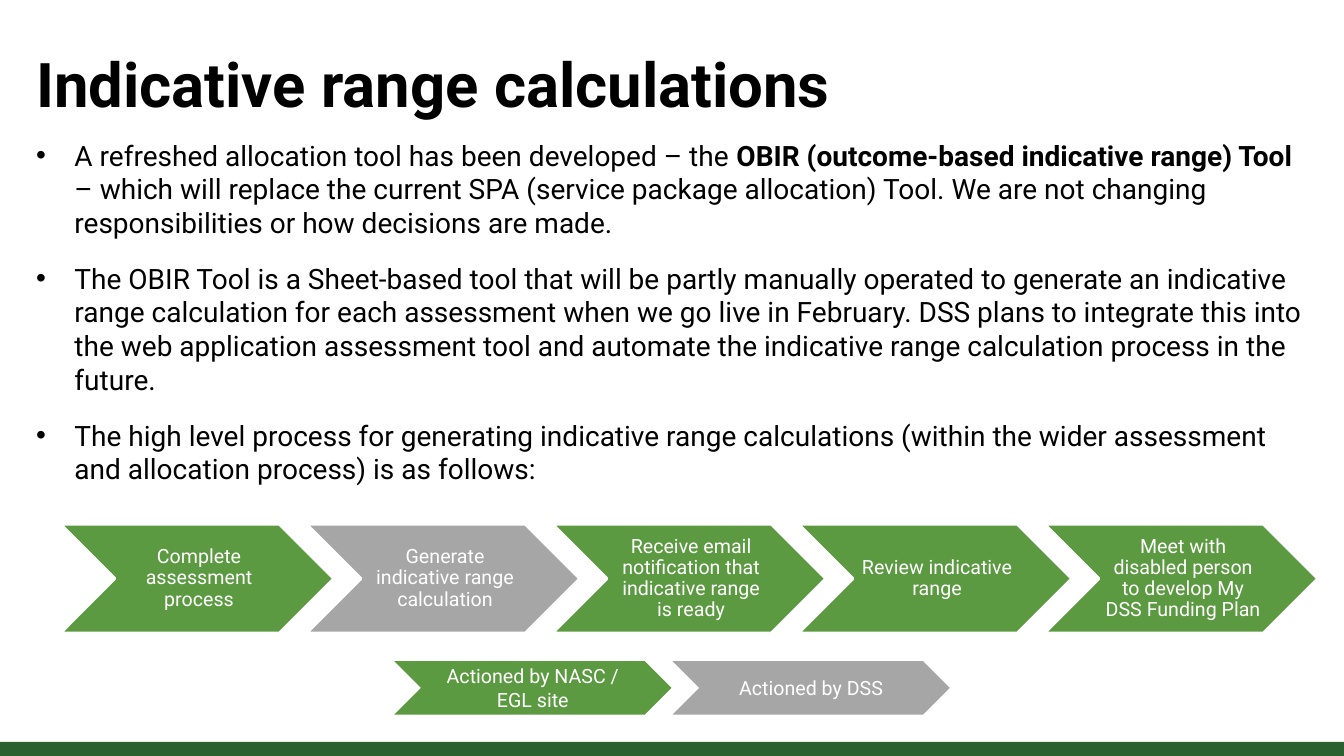
from pptx import Presentation
from pptx.dml.color import RGBColor
from pptx.enum.shapes import MSO_SHAPE
from pptx.enum.text import MSO_ANCHOR, PP_ALIGN
from pptx.oxml.ns import qn
from pptx.util import Inches, Pt
from lxml.etree import SubElement

# The grid has 100 cells to the inch in both directions
COLUMNS, ROWS = 1333, 750
BLACK, WHITE = "000000", "FFFFFF"
DARK_GREEN, GREEN, GREY = "2A602F", "5C9A42", "A6A6A6"


def colour(hex_code):
    return RGBColor.from_string(hex_code)


def cells(count):
    return Inches(count / 100)


class SlideBuilder:
    font_name = "Roboto"
    label_size = 14

    def __init__(self, presentation):
        self.slide = presentation.slides.add_slide(presentation.slide_layouts[6])

    def style(self, font, size, hex_code, bold=False):
        font.name, font.size, font.bold = self.font_name, Pt(size), bold
        font.color.rgb = colour(hex_code)

    def block(self, kind, area, fill, outline=None):
        block = self.slide.shapes.add_shape(kind, *map(cells, area))
        block.shadow.inherit = False
        block.fill.solid()
        block.fill.fore_color.rgb = colour(fill)
        if outline:
            block.line.color.rgb = colour(outline)
            block.line.width = Pt(2)
        else:
            block.line.fill.background()
        return block

    def frame(self, area):
        frame = self.slide.shapes.add_textbox(*map(cells, area)).text_frame
        frame.word_wrap = True
        return frame

    def title(self, area, wording):
        frame = self.frame(area)
        frame.text = wording
        self.style(frame.paragraphs[0].runs[0].font, 44, BLACK, True)

    def bullets(self, area, points):
        frame = self.frame(area)
        for index, phrases in enumerate(points):
            point = frame.add_paragraph() if index else frame.paragraphs[0]
            properties = point._p.get_or_add_pPr()
            properties.set("marL", str(cells(38)))
            properties.set("indent", str(-cells(38)))
            SubElement(properties, qn("a:buFont")).set("typeface", "Arial")
            SubElement(properties, qn("a:buChar")).set("char", "•")
            point.space_before = Pt(4 if index else 0)
            point.space_after = Pt(12)
            for wording, bold in phrases:
                run = point.add_run()
                run.text = wording
                self.style(run.font, 20, BLACK, bold)

    def label(self, frame, wording):
        frame.text = wording
        frame.word_wrap = True
        frame.vertical_anchor = MSO_ANCHOR.MIDDLE
        paragraph = frame.paragraphs[0]
        paragraph.alignment = PP_ALIGN.CENTER
        self.style(paragraph.runs[0].font, self.label_size, WHITE)
        return paragraph

    def step(self, area, wording, fill):
        left, top, width, height = area
        self.block(MSO_SHAPE.CHEVRON, area, fill, WHITE)
        # The label sits between the notch and the point
        frame = self.frame((left + height / 2, top, width - height, height))
        frame.margin_left = cells(6)
        frame.margin_top = frame.margin_right = frame.margin_bottom = cells(2)
        self.label(frame, wording).line_spacing = 0.9

    def key(self, area, wording, fill):
        self.label(self.block(MSO_SHAPE.CHEVRON, area, fill).text_frame, wording)


POINTS = [
    [("A refreshed allocation tool has been developed – the ", False),
     ("OBIR (outcome-based indicative range) Tool ", True),
     ("– which will replace the current SPA (service package allocation) Tool. "
      "We are not changing responsibilities or how decisions are made.", False)],
    [("The OBIR Tool is a Sheet-based tool that will be partly manually operated to "
      "generate an indicative range calculation for each assessment when we go live "
      "in February. DSS plans to integrate this into the web application assessment "
      "tool and automate the indicative range calculation process in the future.",
      False)],
    [("The high level process for generating indicative range calculations (within "
      "the wider assessment and allocation process) is as follows:", False)],
]
STEPS = [
    ("Complete assessment process", GREEN),
    ("Generate indicative range calculation", GREY),
    ("Receive email notification that indicative range is ready", GREEN),
    ("Review indicative range", GREEN),
    ("Meet with disabled person to develop My DSS Funding Plan", GREEN),
]
KEYS = [("Actioned by NASC / EGL site", GREEN), ("Actioned by DSS", GREY)]


def main():
    presentation = Presentation()
    presentation.slide_width, presentation.slide_height = cells(COLUMNS), cells(ROWS)
    builder = SlideBuilder(presentation)

    # Footer band, title and main points
    builder.block(MSO_SHAPE.RECTANGLE, (0, 736, COLUMNS, 14), DARK_GREEN)
    builder.title((26, 41, 1282, 71), "Indicative range calculations")
    builder.bullets((26, 132, 1282, 344), POINTS)

    # Process steps
    for index, (wording, fill) in enumerate(STEPS):
        builder.step((60 + 244 * index, 520, 271, 108), wording, fill)

    # Colour key
    for index, (wording, fill) in enumerate(KEYS):
        builder.key((391 + 276 * index, 656, 275, 53), wording, fill)

    presentation.save("out.pptx")


if __name__ == "__main__":
    main()
